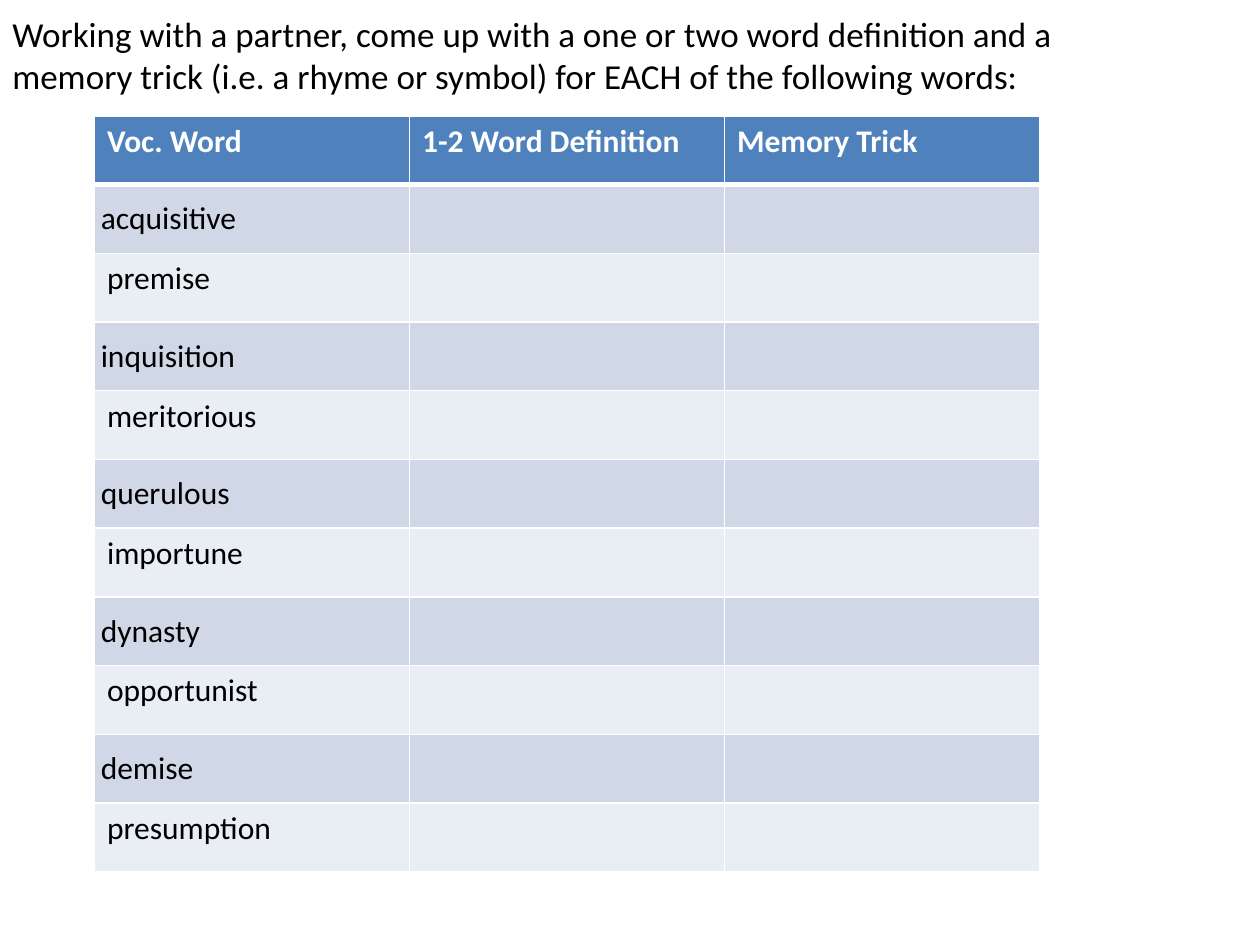
from lxml.etree import SubElement
from pptx import Presentation
from pptx.dml.color import RGBColor
from pptx.enum.text import MSO_ANCHOR
from pptx.oxml import parse_xml
from pptx.oxml.ns import nsdecls, qn
from pptx.util import Inches, Pt

COLORS = {
    "text": "000000",
    "header_text": "FFFFFF",
    "header": "4F81BD",
    "odd_row": "D0D8E8",
    "even_row": "E9EDF4",
    "border": "FFFFFF",
}
HEADINGS = ["Voc. Word", "1-2 Word Definition", "Memory Trick"]
WORDS = ["acquisitive", "premise", "inquisition", "meritorious", "querulous",
         "importune", "dynasty", "opportunist", "demise", "presumption"]
INSTRUCTION = ("Working with a partner, come up with a one or two word definition and a "
               "memory trick (i.e. a rhyme or symbol) for EACH of the following words:")


def write_text(frame, text, *, font, size, color, bold=False):
    paragraph = frame.paragraphs[0]
    paragraph.font.size = Pt(size)
    if not text:
        return
    run = paragraph.add_run()
    run.text = text
    run.font.name = font
    run.font.size = Pt(size)
    run.font.bold = bold
    run.font.color.rgb = RGBColor.from_string(COLORS[color])


def set_borders(cell, bottom=1, top=1):
    """Draw the four cell edges; widths are in points."""
    properties = cell._tc.get_or_add_tcPr()
    edges = {"lnL": 1, "lnR": 1, "lnT": top, "lnB": bottom}
    for position, (edge, width) in enumerate(edges.items()):
        line = parse_xml(f'<a:{edge} {nsdecls("a")} w="{Pt(width)}"/>')
        fill = SubElement(line, qn("a:solidFill"))
        SubElement(fill, qn("a:srgbClr"), val=COLORS["border"])
        properties.insert(position, line)


class SlideBuilder:
    """Holds the font and the slide that elements are added to."""

    def __init__(self, slide, font="Calibri"):
        self.slide = slide
        self.font = font

    def add_instruction(self, text, left, top, width, height):
        box = self.slide.shapes.add_textbox(
            Inches(left), Inches(top), Inches(width), Inches(height))
        frame = box.text_frame
        frame.word_wrap = True
        frame.vertical_anchor = MSO_ANCHOR.MIDDLE
        write_text(frame, text, font=self.font, size=20, color="text")

    def add_word_table(self, headings, words, left, top, width, height):
        rows = [headings] + [[word] + [""] * (len(headings) - 1) for word in words]
        table = self.slide.shapes.add_table(
            len(rows), len(headings),
            Inches(left), Inches(top), Inches(width), Inches(height)).table
        for row_index, row in enumerate(rows):
            for column_index, text in enumerate(row):
                self.fill_cell(table.cell(row_index, column_index), text, row_index)

    def fill_cell(self, cell, text, row_index):
        is_header = row_index == 0
        is_odd = row_index % 2 == 1
        shade = "header" if is_header else "odd_row" if is_odd else "even_row"
        cell.fill.solid()
        cell.fill.fore_color.rgb = RGBColor.from_string(COLORS[shade])
        set_borders(cell, bottom=3 if is_header else 1, top=3 if row_index == 1 else 1)
        if is_odd and text:
            cell.vertical_anchor = MSO_ANCHOR.MIDDLE
            cell.margin_left = cell.margin_right = Inches(0.05)
            cell.margin_top = cell.margin_bottom = 0
        write_text(cell.text_frame, text, font=self.font, size=18, bold=is_header,
                   color="header_text" if is_header else "text")


def main():
    presentation = Presentation()
    presentation.slide_width = Inches(10)
    presentation.slide_height = Inches(7.5)
    builder = SlideBuilder(presentation.slides.add_slide(presentation.slide_layouts[6]))
    builder.add_instruction(INSTRUCTION, 0, 0.03, 9, 0.8)
    builder.add_word_table(HEADINGS, WORDS, 0.75, 0.92, 7.5, 6)
    presentation.save("out.pptx")


if __name__ == "__main__":
    main()
